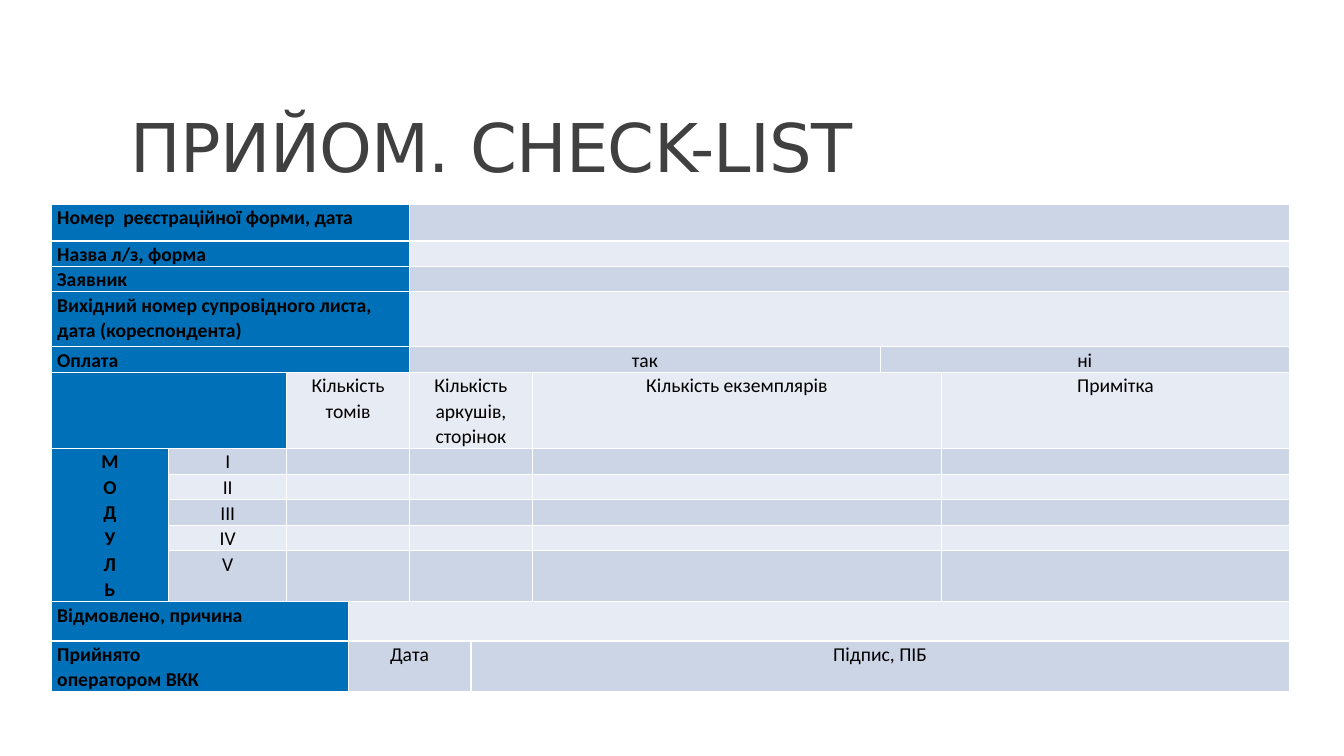
from dataclasses import dataclass

from lxml import etree
from pptx import Presentation
from pptx.dml.color import RGBColor
from pptx.enum.text import MSO_ANCHOR, PP_ALIGN
from pptx.oxml.ns import qn
from pptx.util import Pt

LEFT, CENTER = PP_ALIGN.LEFT, PP_ALIGN.CENTER
BOTTOM = MSO_ANCHOR.BOTTOM

COLORS = {
    "title": "404040",
    "text": "000000",
    "label": "0070B8",
    "band_dark": "CCD5E6",
    "band_light": "E7EBF3",
    "border": "FFFFFF",
}
TITLE_FONT, TABLE_FONT = "DejaVu Sans", "Calibri"
TABLE_SIZE = 14

COLUMNS = [84.2] * 2 + [43.9] * 4 + [248.4, 43.9, 248.4]
ROWS = [26.4, 18.2, 18.2, 39.2, 18.2, 54.6, 18.4, 18.2, 18.2, 18.2, 36.4, 28, 36.4]


@dataclass
class Cell:
    text: str = ""
    cols: int = 1
    rows: int = 1
    label: bool = False
    align: PP_ALIGN = CENTER


def label(text: str, cols: int) -> Cell:
    return Cell(text, cols, label=True, align=LEFT)


def module_row(number: str) -> list[Cell]:
    return [Cell(number), Cell(cols=2), Cell(cols=2), Cell(cols=2), Cell()]


MODULE = Cell("\n".join("МОДУЛЬ"), rows=5, label=True)
FORM = [
    [label("Номер  реєстраційної форми, дата", 4), Cell(cols=5)],
    [label("Назва л/з, форма", 4), Cell(cols=5)],
    [label("Заявник", 4), Cell(cols=5)],
    [label("Вихідний номер супровідного листа, дата (кореспондента)", 4), Cell(cols=5)],
    [label("Оплата", 4), Cell("так", 3), Cell("ні", 2)],
    [label("", 2), Cell("Кількість томів", 2), Cell("Кількість аркушів, сторінок", 2),
     Cell("Кількість екземплярів", 2), Cell("Примітка")],
    [MODULE] + module_row("І"),
    *[module_row(number) for number in ("ІІ", "ІІІ", "ІV", "V")],
    [label("Відмовлено, причина", 3), Cell(cols=6)],
    [label("Прийнято\nоператором ВКК", 3), Cell("Дата", 2), Cell("Підпис, ПІБ", 4)],
]


def rgb(name: str) -> RGBColor:
    return RGBColor.from_string(COLORS[name])


def add_borders(cell) -> None:
    tc_pr = cell._tc.get_or_add_tcPr()
    for side in ("a:lnL", "a:lnR", "a:lnT", "a:lnB"):
        ln = etree.SubElement(tc_pr, qn(side), w=str(Pt(1)))
        fill = etree.SubElement(ln, qn("a:solidFill"))
        etree.SubElement(fill, qn("a:srgbClr"), val=COLORS["border"])


def style_cell(cell, item: Cell, band: str) -> None:
    cell.margin_left = cell.margin_right = Pt(4.5)
    cell.margin_top = cell.margin_bottom = Pt(0)
    add_borders(cell)
    cell.fill.solid()
    cell.fill.fore_color.rgb = rgb("label" if item.label else band)
    for p in cell.text_frame.paragraphs:
        p.alignment = item.align
        p.line_spacing = 1.07
        p.font.name = TABLE_FONT
        p.font.size = Pt(TABLE_SIZE)
        p.font.bold = item.label
        p.font.color.rgb = rgb("text")
        # Empty cells take their line height from the paragraph end
        etree.SubElement(p._p, qn("a:endParaRPr"), sz=str(TABLE_SIZE * 100))


def add_title(slide, text: str) -> None:
    sp = slide.shapes.add_textbox(Pt(86.4), Pt(42.5), Pt(677.5), Pt(94.3))
    tf = sp.text_frame
    tf.word_wrap = True
    tf.vertical_anchor = BOTTOM
    p = tf.paragraphs[0]
    p.line_spacing = 0.85
    p.font.name = TITLE_FONT
    p.font.size = Pt(48)
    p.font.color.rgb = rgb("title")
    r = p.add_run()
    r.text = text
    r._r.get_or_add_rPr().set("spc", "-50")


def add_form(slide) -> None:
    table = slide.shapes.add_table(len(ROWS), len(COLUMNS), Pt(36.4), Pt(145.7),
                                   Pt(sum(COLUMNS)), Pt(sum(ROWS))).table
    table.first_row = table.horz_banding = False
    for column, width in zip(table.columns, COLUMNS):
        column.width = Pt(width)
    for row, height in zip(table.rows, ROWS):
        row.height = Pt(height)

    for i, items in enumerate(FORM):
        band = "band_light" if i % 2 else "band_dark"
        j = 0
        for item in items:
            # Step over columns covered by a cell from a row above
            while table.cell(i, j).is_spanned:
                j += 1
            cell = table.cell(i, j)
            cell.text_frame.text = item.text
            if item.cols * item.rows > 1:
                cell.merge(table.cell(i + item.rows - 1, j + item.cols - 1))
            for y in range(i, i + item.rows):
                for x in range(j, j + item.cols):
                    style_cell(table.cell(y, x), item, band)
            j += item.cols


def main() -> None:
    prs = Presentation()
    prs.slide_width, prs.slide_height = Pt(960), Pt(540)
    slide = prs.slides.add_slide(prs.slide_layouts[6])
    add_title(slide, "ПРИЙОМ. CHECK-LIST")
    add_form(slide)
    prs.save("out.pptx")


if __name__ == "__main__":
    main()
